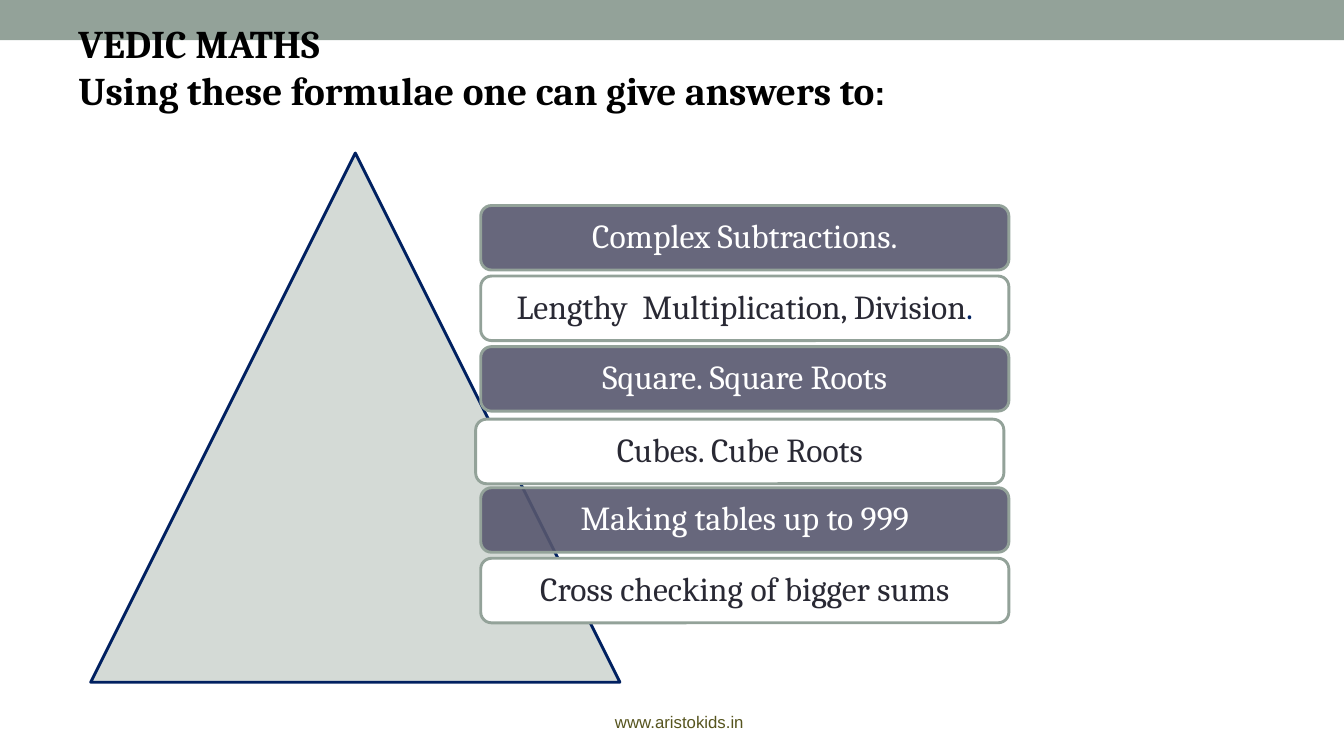
from pptx import Presentation
from pptx.dml.color import RGBColor
from pptx.enum import shapes, text
from pptx.oxml.xmlchemy import OxmlElement
from pptx.util import Pt

SAGE = RGBColor(0x93, 0xA2, 0x99)
PALE_SAGE = RGBColor(0xD4, 0xDA, 0xD6)
NAVY = RGBColor(0x00, 0x20, 0x60)
SLATE = RGBColor(0x57, 0x57, 0x6E)
INK = RGBColor(0x29, 0x29, 0x34)
OLIVE = RGBColor(0x56, 0x54, 0x1E)
BLACK = RGBColor(0, 0, 0)
WHITE = RGBColor(0xFF, 0xFF, 0xFF)

TOPICS = [
    ["Complex Subtractions."],
    ["Lengthy  Multiplication, Division", "."],
    ["Square. Square Roots"],
    ["Cubes. Cube Roots"],
    ["Making tables up to 999"],
    ["Cross checking of bigger sums"],
]
NUDGED = {3: (-3.6, 1.44)}  # the cubes bar sits slightly off the column


def style(font, name, size, color, bold=False):
    font.name, font.size, font.bold = name, Pt(size), bold
    font.color.rgb = color


def set_insets(tf, left, top, right, bottom):
    tf.margin_left, tf.margin_top = Pt(left), Pt(top)
    tf.margin_right, tf.margin_bottom = Pt(right), Pt(bottom)


def add_box(s, kind, x, y, w, h, fill, line=None):
    sp = s.shapes.add_shape(kind, Pt(x), Pt(y), Pt(w), Pt(h))
    sp.shadow.inherit = False
    sp.fill.solid()
    sp.fill.fore_color.rgb = fill
    if line is None:
        sp.line.fill.background()
    else:
        sp.line.color.rgb = line
        sp.line.width = Pt(2.08)
    return sp


def set_opacity(sp, percent):
    alpha = OxmlElement("a:alpha")
    alpha.set("val", str(percent * 1000))
    sp.fill._xPr.find(".//{*}solidFill")[0].append(alpha)


def add_heading(s, x, y, w, h):
    title = s.shapes.title
    title.left, title.top, title.width, title.height = Pt(x), Pt(y), Pt(w), Pt(h)
    tf = title.text_frame
    tf.auto_size = text.MSO_AUTO_SIZE.NONE
    tf.word_wrap = True
    tf.vertical_anchor = text.MSO_ANCHOR.BOTTOM
    set_insets(tf, 56, 31, 161, 18.7)
    tf.text = "VEDIC MATHS\nUsing these formulae one can give answers to"
    for p in tf.paragraphs:
        p.alignment = text.PP_ALIGN.LEFT
        style(p.runs[0].font, "Cambria", 28, BLACK, True)
    r = tf.paragraphs[-1].add_run()
    r.text = ":"
    style(r.font, "Arial", 24, BLACK, True)


def add_topic(s, x, y, w, h, parts, dark):
    sp = add_box(s, shapes.MSO_SHAPE.ROUNDED_RECTANGLE, x, y, w, h,
                 SLATE if dark else WHITE, SAGE)
    if dark:
        set_opacity(sp, 90)
    tf = sp.text_frame
    tf.word_wrap = True
    tf.vertical_anchor = text.MSO_ANCHOR.MIDDLE
    set_insets(tf, 7.2, 7.2, 7.2, 7.2)
    p = tf.paragraphs[0]
    p.alignment = text.PP_ALIGN.CENTER
    p.line_spacing = 0.9
    for part, color in zip(parts, (WHITE if dark else INK, NAVY)):
        r = p.add_run()
        r.text = part
        style(r.font, "Cambria", 24, color)


def add_pyramid(s, x, y, size):
    """Triangle with the column of topic bars starting near its middle."""
    add_box(s, shapes.MSO_SHAPE.ISOSCELES_TRIANGLE, x, y, size, size, PALE_SAGE, NAVY)
    for i, parts in enumerate(TOPICS):
        dx, dy = NUDGED.get(i, (0, 0))
        add_topic(s, x + 278.6 + dx, y + 37.5 + i * 50.4 + dy, 377.3, 46.1,
                  parts, dark=i % 2 == 0)


def add_footer(s, x, y, w, h):
    tf = s.shapes.add_textbox(Pt(x), Pt(y), Pt(w), Pt(h)).text_frame
    tf.word_wrap = True
    tf.vertical_anchor = text.MSO_ANCHOR.MIDDLE
    p = tf.paragraphs[0]
    p.text = "www.aristokids.in"
    p.alignment = text.PP_ALIGN.CENTER
    style(p.font, "Arial", 12, OLIVE)


def main():
    prs = Presentation()
    prs.slide_width, prs.slide_height = Pt(960), Pt(540)
    s = prs.slides.add_slide(prs.slide_layouts[5])
    band = add_box(s, shapes.MSO_SHAPE.RECTANGLE, 0, 0, 960, 28.8, SAGE)
    s.shapes.title._element.addprevious(band._element)
    add_heading(s, 0, 0, 960, 100)
    add_pyramid(s, 64.8, 109.3, 378)
    add_footer(s, 323.3, 501.1, 324, 28.8)
    prs.save("out.pptx")


if __name__ == "__main__":
    main()
